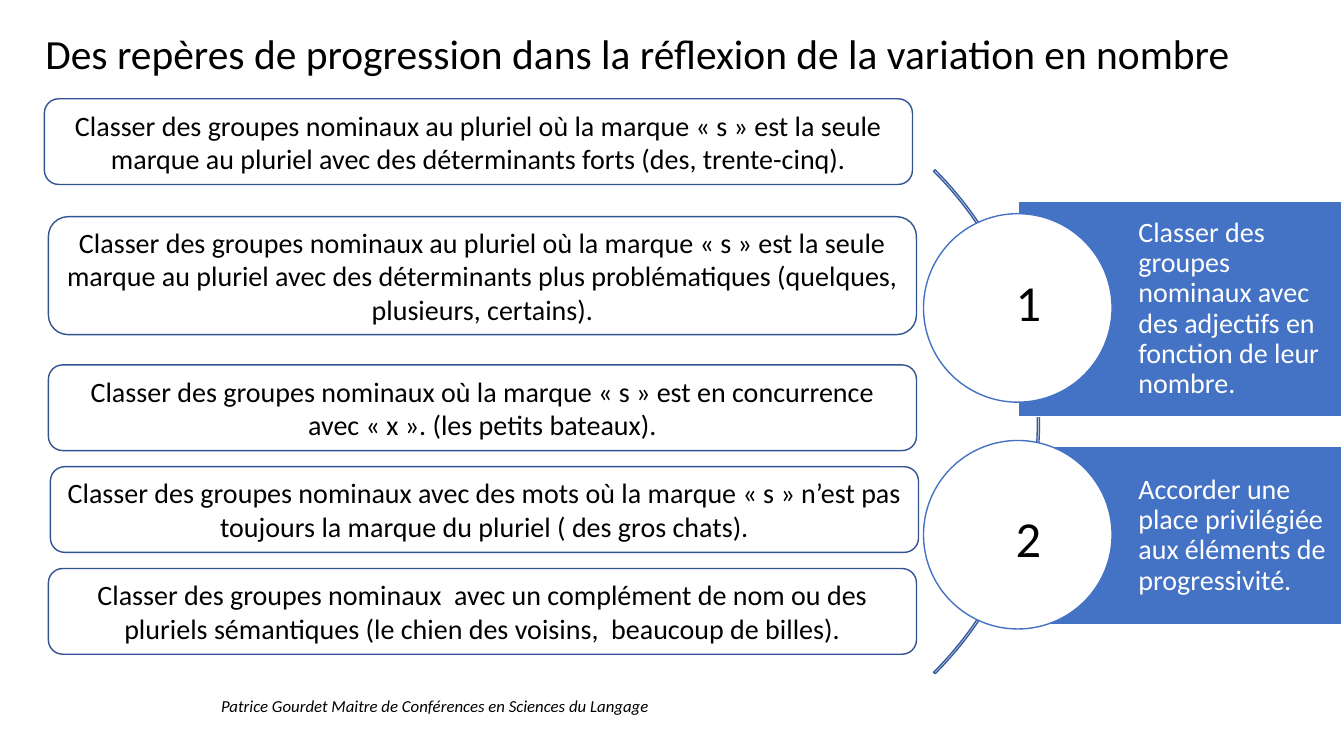
import pptx
import pptx.dml.color
import pptx.enum.shapes
import pptx.enum.text
import pptx.util

PX = 9144
THEME = {
    "font": "Calibri",
    "black": "000000",
    "white": "FFFFFF",
    "blue": "4472C4",
    "outline": "325491",
    "arc": "365B9D",
    "title": 29.6,
    "body": 20,
    "number": 36,
    "footer": 12,
}
SHAPES = pptx.enum.shapes.MSO_SHAPE
ALIGN = pptx.enum.text.PP_ALIGN
ANCHOR = pptx.enum.text.MSO_ANCHOR


def write_text(shape, text, size="body", color="black", align=ALIGN.CENTER,
               anchor=ANCHOR.MIDDLE, spacing=1.0, italic=False, margins=(10, 5, 10, 5)):
    frame = shape.text_frame
    frame.word_wrap = True
    frame.auto_size = pptx.enum.text.MSO_AUTO_SIZE.NONE
    frame.vertical_anchor = anchor
    frame.margin_left, frame.margin_top, frame.margin_right, frame.margin_bottom = (
        margin * PX for margin in margins)
    paragraph = frame.paragraphs[0]
    paragraph.alignment = align
    paragraph.line_spacing = spacing
    run = paragraph.add_run()
    run.text = text
    run.font.name = THEME["font"]
    run.font.size = pptx.util.Pt(THEME[size])
    run.font.italic = italic
    run.font.color.rgb = pptx.dml.color.RGBColor.from_string(THEME[color])


def add_box(kind, left, top, width, height, line, fill=None):
    shape = slide.shapes.add_shape(kind, left * PX, top * PX, width * PX, height * PX)
    shape.shadow.inherit = False
    if fill:
        shape.fill.solid()
        shape.fill.fore_color.rgb = pptx.dml.color.RGBColor.from_string(THEME[fill])
    else:
        shape.fill.background()
    shape.line.color.rgb = pptx.dml.color.RGBColor.from_string(THEME[line])
    shape.line.width = pptx.util.Pt(1)
    return shape


presentation = pptx.Presentation()
presentation.slide_width = 1333 * PX
presentation.slide_height = 750 * PX
slide = presentation.slides.add_slide(presentation.slide_layouts[5])

title = slide.shapes.title
title.left, title.top, title.width, title.height = 35 * PX, 12 * PX, 1263 * PX, 87 * PX
write_text(title, "Des repères de progression dans la réflexion de la variation en nombre",
           size="title", align=ALIGN.LEFT, spacing=0.9)

steps = [
    (44, 98, 85, "Classer des groupes nominaux au pluriel où la marque « s » est la seule "
                 "marque au pluriel avec des déterminants forts (des, trente-cinq)."),
    (48, 215, 117, "Classer des groupes nominaux au pluriel où la marque « s » est la seule "
                   "marque au pluriel avec des déterminants plus problématiques "
                   "(quelques, plusieurs, certains)."),
    (48, 362, 85, "Classer des groupes nominaux où la marque « s » est en concurrence "
                  "avec « x ». (les petits bateaux)."),
    (50, 463, 85, "Classer des groupes nominaux avec des mots où la marque « s » n’est pas "
                  "toujours la marque du pluriel ( des gros chats)."),
    (48, 564, 85, "Classer des groupes nominaux  avec un complément de nom ou des "
                  "pluriels sémantiques (le chien des voisins,  beaucoup de billes)."),
]
for left, top, height, text in steps:
    step = add_box(SHAPES.ROUNDED_RECTANGLE, left, top, 861, height, "outline")
    write_text(step, text)

arc = add_box(SHAPES.BLOCK_ARC, 324, 65, 707, 707, "arc")
for index, adjustment in enumerate((189, 27, 0.003)):
    arc.adjustments[index] = adjustment

goals = [
    ("1", 200, 213, 212, 264,
     "Classer des groupes nominaux avec des adjectifs en fonction de leur nombre."),
    ("2", 443, 177, 437, 498,
     "Accorder une place privilégiée aux éléments de progressivité."),
]
for number, top, height, circle_top, number_top, text in goals:
    panel = add_box(SHAPES.RECTANGLE, 1010, top, 321, height, "white", "blue")
    write_text(panel, text, color="white", align=ALIGN.LEFT, spacing=0.9,
               margins=(119, 6, 6, 6))
    add_box(SHAPES.OVAL, 916, circle_top, 187, 187, "blue", "white")
    label = slide.shapes.add_textbox(981 * PX, number_top * PX, 78 * PX, 71 * PX)
    write_text(label, number, size="number", anchor=ANCHOR.TOP)

footer = slide.shapes.add_textbox(87 * PX, 685 * PX, 689 * PX, 30 * PX)
write_text(footer, "Patrice Gourdet Maitre de Conférences en Sciences du Langage",
           size="footer", anchor=ANCHOR.TOP, italic=True)

presentation.save("out.pptx")
